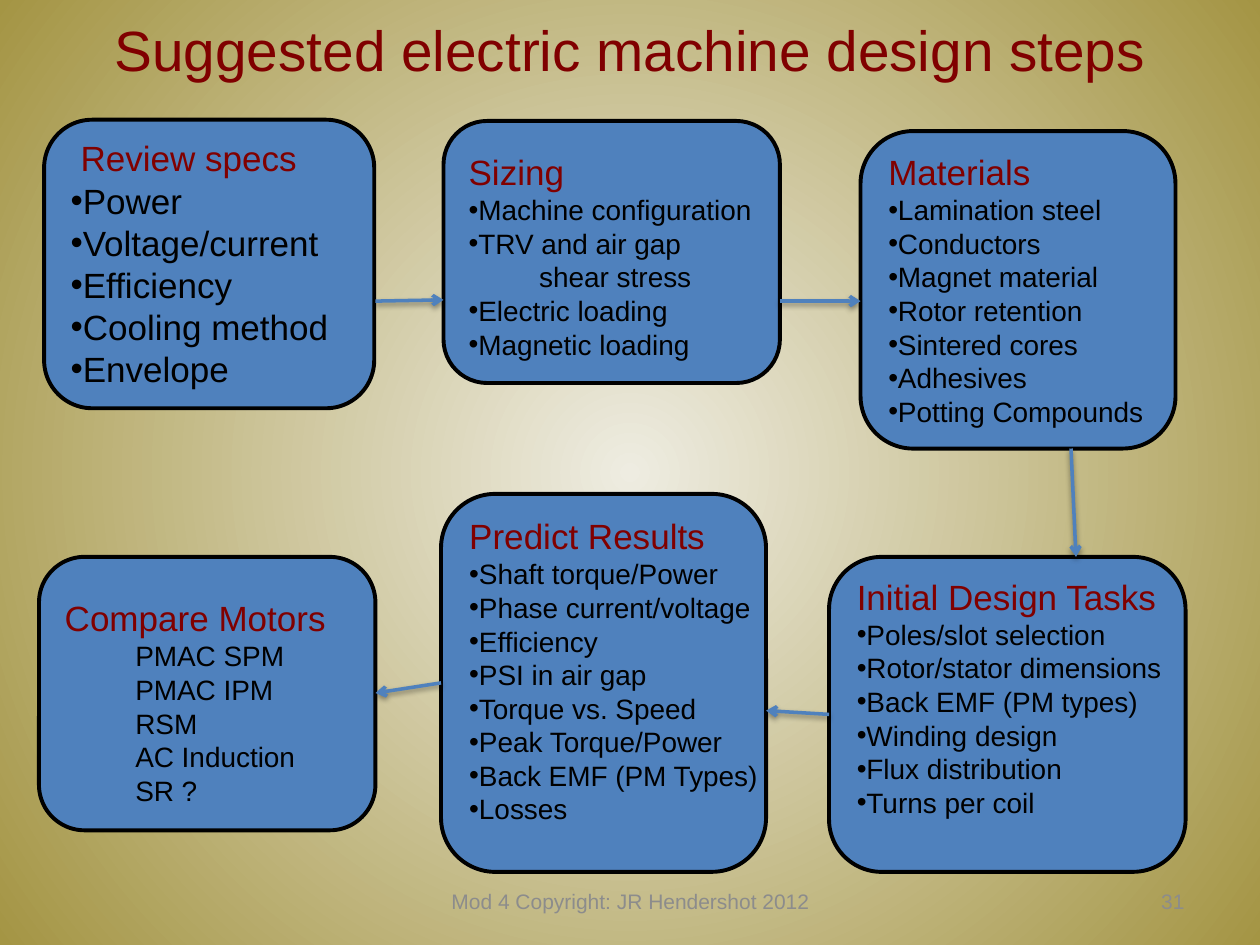
from dataclasses import dataclass

from lxml import etree
from pptx import Presentation
from pptx import util as u
from pptx.dml.color import RGBColor
from pptx.enum import shapes, text
from pptx.oxml import ns


@dataclass(frozen=True)
class Theme:
    font: str = "Arial"
    heading: str = "800000"
    body: str = "000000"
    muted: str = "8C8C8C"
    panel: str = "4F81BD"
    outline: str = "000000"
    glow: str = "EEECE1"
    edge: str = "A49544"
    title_size: float = 32.4
    heading_size: float = 20
    item_size: float = 16
    footer_size: float = 12
    leading: float = 1.2
    outline_width: float = 2.25
    arrow_width: float = 2


@dataclass(frozen=True)
class Step:
    heading: str
    place: tuple  # left, top, width, height in grid units
    text_top: float
    items: tuple
    indented: tuple = ()
    item_size: float = Theme.item_size
    heading_indent: float = 0


def add_xml(parent, tag, **attributes):
    return etree.SubElement(parent, ns.qn(tag), attributes)


class StepSlide:
    """One slide on a grid of 100 columns by 75 rows."""

    def __init__(self, deck, theme):
        self.theme = theme
        self.cell = deck.slide_width / 100
        self.slide = deck.slides.add_slide(deck.slide_layouts[5])

    def grid(self, *units):
        return [round(unit * self.cell) for unit in units]

    def style(self, para, size, color):
        for span in para.runs:
            span.font.name = self.theme.font
            span.font.size = u.Pt(size)
            span.font.color.rgb = RGBColor.from_string(color)

    def background(self):
        fill = self.slide.background.fill
        fill.gradient()
        colors = (self.theme.glow, self.theme.edge)
        for position, (stop, color) in enumerate(zip(fill.gradient_stops, colors)):
            stop.position = position
            stop.color.rgb = RGBColor.from_string(color)
        gradient = next(self.slide.element.iter(ns.qn("a:gradFill")))
        gradient.remove(gradient.find(ns.qn("a:lin")))
        circle = add_xml(gradient, "a:path", path="circle")
        add_xml(circle, "a:fillToRect", l="50000", t="50000", r="50000", b="50000")

    def title(self, words, place):
        box = self.slide.shapes.title
        box.left, box.top, box.width, box.height = self.grid(*place)
        self.fill_text(box, words, self.theme.title_size, self.theme.heading,
                       text.PP_ALIGN.CENTER)

    def label(self, words, place, align):
        box = self.slide.shapes.add_textbox(*self.grid(*place))
        self.fill_text(box, words, self.theme.footer_size, self.theme.muted, align)

    def fill_text(self, box, words, size, color, align):
        frame = box.text_frame
        frame.text = words
        frame.word_wrap = True
        frame.vertical_anchor = text.MSO_ANCHOR.MIDDLE
        para = frame.paragraphs[0]
        para.alignment = align
        self.style(para, size, color)

    def step(self, step):
        theme = self.theme
        left, top, width, height = step.place
        box = self.slide.shapes.add_shape(
            shapes.MSO_SHAPE.FLOWCHART_ALTERNATE_PROCESS, *self.grid(*step.place))
        box.shadow.inherit = False
        box.fill.solid()
        box.fill.fore_color.rgb = RGBColor.from_string(theme.panel)
        box.line.color.rgb = RGBColor.from_string(theme.outline)
        box.line.width = u.Pt(theme.outline_width)

        frame = box.text_frame
        frame.word_wrap = False
        frame.vertical_anchor = text.MSO_ANCHOR.TOP
        corner_inset = 0.05 * min(width, height)
        frame.margin_top, = self.grid(step.text_top - top - corner_inset)
        frame.margin_bottom = 0
        self.line(frame.paragraphs[0], step.heading, theme.heading_size,
                  theme.heading, step.heading_indent)
        for item in step.items:
            inset = item in step.indented
            self.line(frame.add_paragraph(), item, step.item_size, theme.body,
                      5.6 if inset else 0, bullet=not inset)

    def line(self, para, words, size, color, indent=0, bullet=False):
        para.text = words
        para.alignment = text.PP_ALIGN.LEFT
        para.line_spacing = u.Pt(size * self.theme.leading)
        self.style(para, size, color)
        properties = para._p.get_or_add_pPr()
        properties.set("marL", str(self.grid(indent)[0]))
        properties.set("indent", "0")
        if bullet:
            add_xml(properties, "a:buFont", typeface=self.theme.font)
            add_xml(properties, "a:buChar", char="•")

    def arrow(self, start, end):
        connector = self.slide.shapes.add_connector(
            shapes.MSO_CONNECTOR.STRAIGHT, *self.grid(*start, *end))
        connector.line.color.rgb = RGBColor.from_string(self.theme.panel)
        connector.line.width = u.Pt(self.theme.arrow_width)
        add_xml(connector.line._get_or_add_ln(), "a:tailEnd", type="arrow")
        effects = add_xml(connector._element.spPr, "a:effectLst")
        shadow = add_xml(effects, "a:outerShdw", blurRad=str(u.Pt(3.1)),
                         dist=str(u.Pt(1.6)), dir="5400000", rotWithShape="0")
        shade = add_xml(shadow, "a:srgbClr", val=self.theme.outline)
        add_xml(shade, "a:alpha", val="38000")


MOTORS = ("PMAC SPM", "PMAC IPM", "RSM", "AC Induction", "SR ?")
STEPS = (
    Step("Review specs", (3.5, 9.5, 26.2, 22.9), 10.9,
         ("Power", "Voltage/current", "Efficiency", "Cooling method", "Envelope"),
         item_size=Theme.heading_size, heading_indent=0.8),
    Step("Sizing", (35.2, 9.6, 26.7, 20.8), 12,
         ("Machine configuration", "TRV and air gap", "shear stress",
          "Electric loading", "Magnetic loading"), indented=("shear stress",)),
    Step("Materials", (68.3, 10.4, 25, 25.2), 12,
         ("Lamination steel", "Conductors", "Magnet material", "Rotor retention",
          "Sintered cores", "Adhesives", "Potting Compounds")),
    Step("Initial Design Tasks", (65.8, 44.2, 28.3, 25), 45.7,
         ("Poles/slot selection", "Rotor/stator dimensions", "Back EMF (PM types)",
          "Winding design", "Flux distribution", "Turns per coil")),
    Step("Predict Results", (35, 39.2, 25.8, 30), 40.9,
         ("Shaft torque/Power", "Phase current/voltage", "Efficiency",
          "PSI in air gap", "Torque vs. Speed", "Peak Torque/Power",
          "Back EMF (PM Types)", "Losses")),
    Step("Compare Motors", (3.1, 44.2, 26.7, 21.7), 47.4, MOTORS, indented=MOTORS),
)
ARROWS = (
    ((29.8, 23.9), (35.2, 23.8)),
    ((61.9, 23.9), (68.3, 23.9)),
    ((85, 35.6), (85.4, 44.2)),
    ((65.8, 56.7), (60.8, 56.4)),
    ((35, 54.2), (29.8, 55)),
)


def main():
    deck = Presentation()
    deck.slide_width, deck.slide_height = u.Inches(10), u.Inches(7.5)
    page = StepSlide(deck, Theme())
    page.background()
    page.title("Suggested electric machine design steps", (5, 0, 90, 7.7))
    page.label("Mod 4 Copyright: JR Hendershot 2012", (34.2, 69.5, 31.7, 4),
               text.PP_ALIGN.CENTER)
    page.label("31", (71.7, 69.5, 23.3, 4), text.PP_ALIGN.RIGHT)
    for step in STEPS:
        page.step(step)
    for start, end in ARROWS:
        page.arrow(start, end)
    deck.save("out.pptx")


if __name__ == "__main__":
    main()
